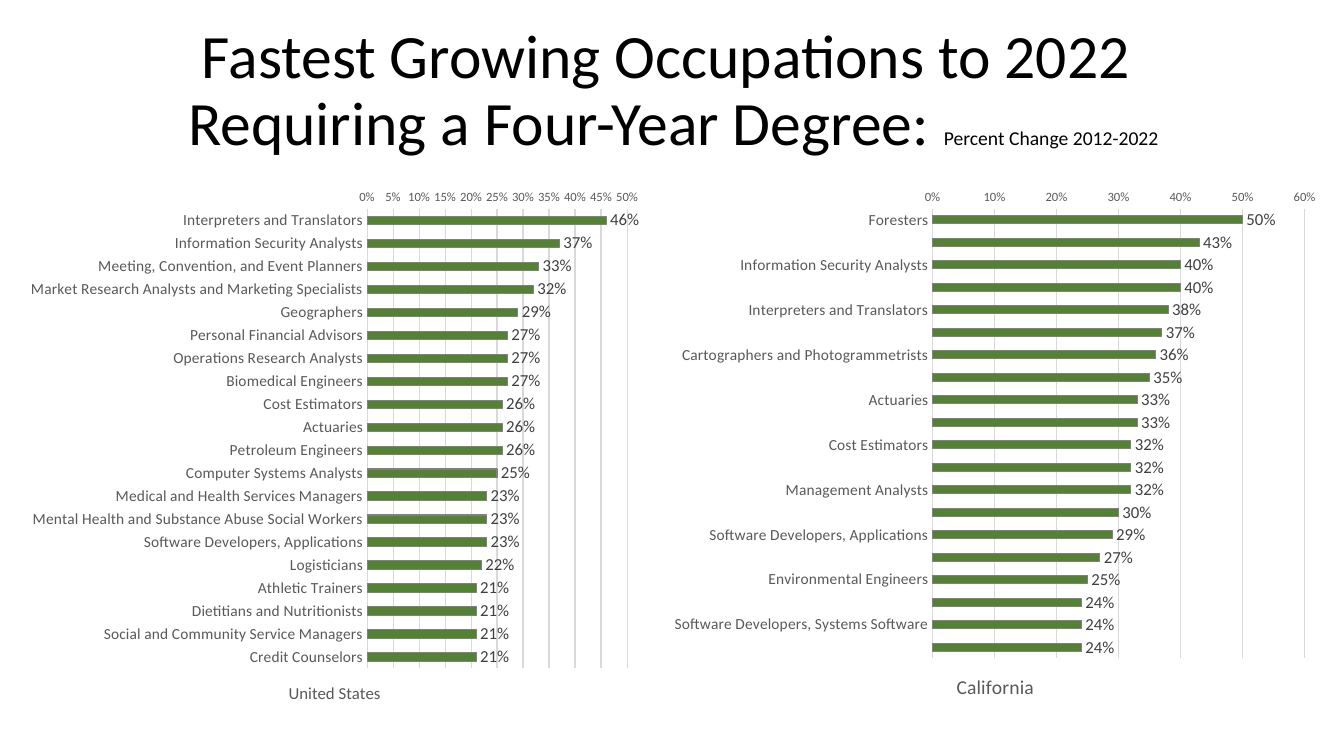
from lxml import etree
from pptx import Presentation
from pptx.chart.data import CategoryChartData
from pptx.dml.color import RGBColor
from pptx.enum.chart import XL_CHART_TYPE, XL_LABEL_POSITION, XL_TICK_LABEL_POSITION, XL_TICK_MARK
from pptx.enum.text import MSO_ANCHOR, MSO_AUTO_SIZE, PP_ALIGN
from pptx.oxml.ns import qn
from pptx.util import Pt

BAR_CLUSTERED = XL_CHART_TYPE.BAR_CLUSTERED
OUTSIDE_END = XL_LABEL_POSITION.OUTSIDE_END
NEXT_TO_AXIS = XL_TICK_LABEL_POSITION.NEXT_TO_AXIS
NO_TICK = XL_TICK_MARK.NONE
MIDDLE = MSO_ANCHOR.MIDDLE
NO_AUTOFIT = MSO_AUTO_SIZE.NONE
CENTER = PP_ALIGN.CENTER

BLACK = RGBColor(0x00, 0x00, 0x00)
GREEN = RGBColor(0x54, 0x82, 0x35)
BAR_EDGE = RGBColor(0x80, 0x80, 0x80)
GRID_GRAY = RGBColor(0xD9, 0xD9, 0xD9)
AXIS_GRAY = RGBColor(0x59, 0x59, 0x59)
LABEL_GRAY = RGBColor(0x40, 0x40, 0x40)

UNITED_STATES = {
    "region": "United States",
    "region_size": 12,
    "region_at": (191, 356.4),
    "plot_box": (249.2, 20.9, 185.7, 328.5),
    "scale": {"minimum_scale": 0, "maximum_scale": 0.5, "major_unit": 0.05},
    "growth": [
        ("Interpreters and Translators", 0.46),
        ("Information Security Analysts", 0.37),
        ("Meeting, Convention, and Event Planners", 0.33),
        ("Market Research Analysts and Marketing Specialists", 0.32),
        ("Geographers", 0.29),
        ("Personal Financial Advisors", 0.27),
        ("Operations Research Analysts", 0.27),
        ("Biomedical Engineers", 0.27),
        ("Cost Estimators", 0.26),
        ("Actuaries", 0.26),
        ("Petroleum Engineers", 0.26),
        ("Computer Systems Analysts", 0.25),
        ("Medical and Health Services Managers", 0.23),
        ("Mental Health and Substance Abuse Social Workers", 0.23),
        ("Software Developers, Applications", 0.23),
        ("Logisticians", 0.22),
        ("Athletic Trainers", 0.21),
        ("Dietitians and Nutritionists", 0.21),
        ("Social and Community Service Managers", 0.21),
        ("Credit Counselors", 0.21),
    ],
}
CALIFORNIA = {
    "region": "California",
    "region_size": 14,
    "region_at": (208.4, 350.4),
    "plot_box": (193.8, 20.9, 265.8, 321.3),
    "scale": {"minimum_scale": 0, "maximum_scale": 0.6, "major_unit": 0.1},
    "growth": [
        ("Foresters", 0.5),
        ("", 0.43),
        ("Information Security Analysts", 0.4),
        ("", 0.4),
        ("Interpreters and Translators", 0.38),
        ("", 0.37),
        ("Cartographers and Photogrammetrists", 0.36),
        ("", 0.35),
        ("Actuaries", 0.33),
        ("", 0.33),
        ("Cost Estimators", 0.32),
        ("", 0.32),
        ("Management Analysts", 0.32),
        ("", 0.3),
        ("Software Developers, Applications", 0.29),
        ("", 0.27),
        ("Environmental Engineers", 0.25),
        ("", 0.24),
        ("Software Developers, Systems Software", 0.24),
        ("", 0.24),
    ],
}


def apply(target, values):
    for name, value in values.items():
        setattr(target, name, value)


def style_font(font, size, color):
    apply(font, {"name": "Calibri", "size": Pt(size), "bold": False})
    font.color.rgb = color


def style_line(line, color):
    line.color.rgb = color
    line.width = Pt(0.75)


def set_layout(parent, index, settings):
    for old in parent.findall(qn("c:layout")):
        parent.remove(old)
    layout = etree.Element(qn("c:layout"))
    manual = etree.SubElement(layout, qn("c:manualLayout"))
    for name, value in settings.items():
        etree.SubElement(manual, qn(f"c:{name}")).set("val", str(value))
    parent.insert(index, layout)


def add_heading(slide, box):
    heading = slide.shapes.title
    apply(heading, dict(zip(("left", "top", "width", "height"), map(Pt, box))))
    frame = heading.text_frame
    apply(frame, {"word_wrap": True, "auto_size": NO_AUTOFIT, "vertical_anchor": MIDDLE})
    paragraph = frame.paragraphs[0]
    apply(paragraph, {"alignment": CENTER, "line_spacing": 0.9})
    lines = (
        ("Fastest Growing Occupations to 2022 ", 44),
        ("Requiring a Four-Year Degree: ", 44),
        ("Percent Change 2012-2022", 14),
    )
    for position, (words, size) in enumerate(lines):
        if position == 1:
            paragraph.add_line_break()
        run = paragraph.add_run()
        run.text = words
        style_font(run.font, size, BLACK)


def add_growth_chart(slide, box, content):
    data = CategoryChartData(number_format="0%")
    data.categories, growth = zip(*content["growth"])
    data.add_series("Series 1", growth)
    chart = slide.shapes.add_chart(BAR_CLUSTERED, *map(Pt, box), data).chart
    apply(chart, {"has_legend": False, "has_title": False})
    style_font(chart.font, 10, BLACK)

    occupations, percent = chart.category_axis, chart.value_axis
    plain_axis = {
        "major_tick_mark": NO_TICK,
        "minor_tick_mark": NO_TICK,
        "tick_label_position": NEXT_TO_AXIS,
    }
    for axis, size in ((occupations, 11), (percent, 9)):
        apply(axis, plain_axis)
        style_font(axis.tick_labels.font, size, AXIS_GRAY)
    apply(occupations, {"reverse_order": True, "has_major_gridlines": False})
    style_line(occupations.format.line, GRID_GRAY)
    apply(percent, {**content["scale"], "has_major_gridlines": True})
    apply(percent.tick_labels, {"number_format": "0%", "number_format_is_linked": False})
    percent.format.line.fill.background()
    style_line(percent.major_gridlines.format.line, GRID_GRAY)

    region = percent.axis_title
    region.text_frame.text = content["region"]
    style_font(region.text_frame.paragraphs[0].runs[0].font, content["region_size"], AXIS_GRAY)

    plot = chart.plots[0]
    apply(plot, {"gap_width": 182, "vary_by_categories": False, "has_data_labels": True})
    apply(plot.data_labels, {
        "show_value": True,
        "position": OUTSIDE_END,
        "number_format": "0%",
        "number_format_is_linked": False,
    })
    style_font(plot.data_labels.font, 12, LABEL_GRAY)
    bars = plot.series[0]
    bars.invert_if_negative = False
    bars.format.fill.solid()
    bars.format.fill.fore_color.rgb = GREEN
    style_line(bars.format.line, BAR_EDGE)

    width, height = box[2:]
    left, top, plot_width, plot_height = content["plot_box"]
    edges = {"xMode": "edge", "yMode": "edge"}
    plot_area = chart._chartSpace.chart.plotArea
    set_layout(plot_area, 0, {
        "layoutTarget": "inner", **edges,
        "x": left / width, "y": top / height,
        "w": plot_width / width, "h": plot_height / height,
    })
    region_left, region_top = content["region_at"]
    set_layout(region._element, 1, {**edges, "x": region_left / width, "y": region_top / height})


def main():
    deck = Presentation()
    apply(deck, {"slide_width": Pt(960), "slide_height": Pt(540)})
    slide = deck.slides.add_slide(deck.slide_layouts[5])
    add_heading(slide, (13, 13.7, 936, 104.4))
    add_growth_chart(slide, (13, 128.2, 452.2, 390.2), UNITED_STATES)
    add_growth_chart(slide, (472.3, 128.2, 476.6, 387.4), CALIFORNIA)
    deck.save("out.pptx")


if __name__ == "__main__":
    main()
